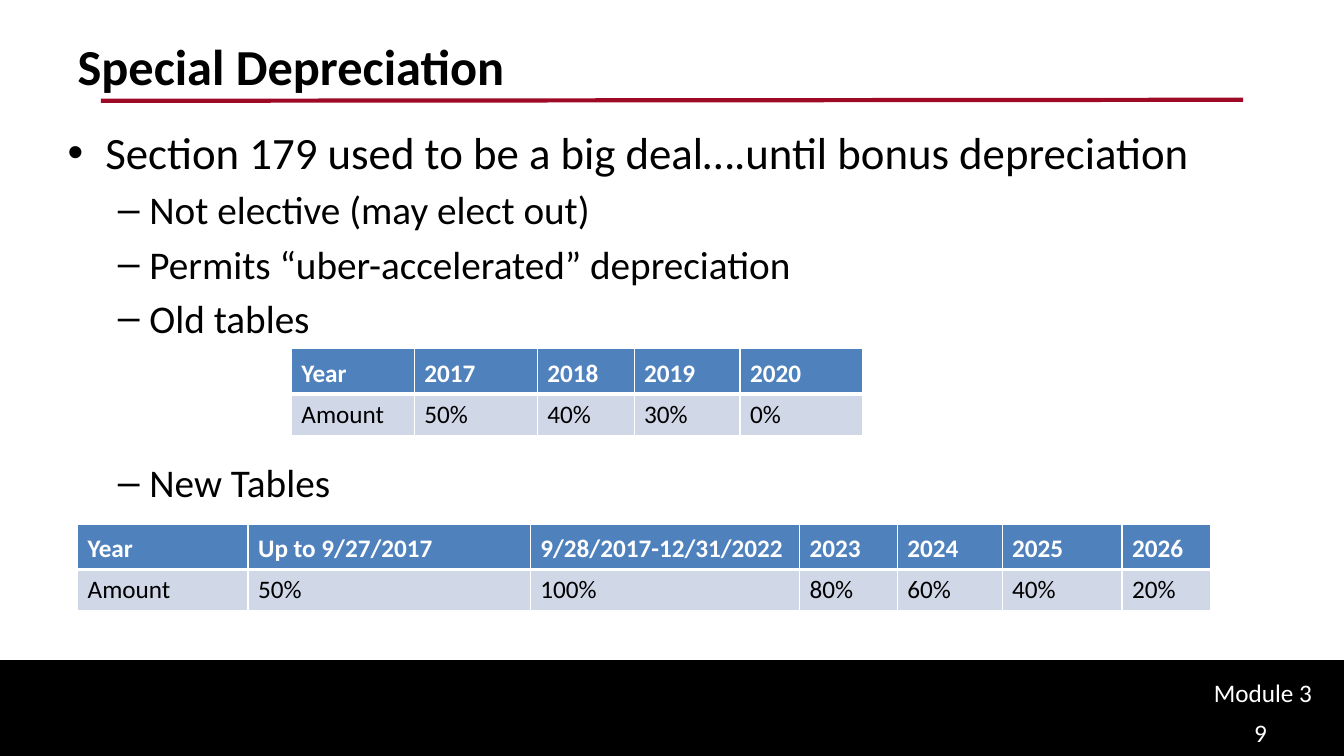
from dataclasses import dataclass

from lxml.etree import SubElement
from pptx import Presentation
from pptx.dml.color import RGBColor
from pptx.enum.shapes import MSO_CONNECTOR as Connector, MSO_SHAPE as Shape
from pptx.enum.text import MSO_ANCHOR as Anchor, MSO_AUTO_SIZE as AutoSize, PP_ALIGN as Align
from pptx.oxml.ns import qn
from pptx.util import Inches, Pt


@dataclass(frozen=True)
class Theme:
    font: str = "Calibri"
    black: str = "000000"
    white: str = "FFFFFF"
    red: str = "9E0926"
    header_blue: str = "4F81BD"
    band_blue: str = "D0D8E8"
    title_size: int = 36
    list_sizes: tuple = (32, 28)
    small_size: int = 18
    list_gap: int = 5


class SlideBuilder:
    def __init__(self, deck, theme):
        self.theme = theme
        self.page = deck.slides.add_slide(deck.slide_layouts[1])

    def add_span(self, para, text, size, color, bold=False):
        span = para.add_run()
        span.text = text
        span.font.name = self.theme.font
        span.font.size = Pt(size)
        span.font.bold = bold
        span.font.color.rgb = RGBColor.from_string(color)

    def place(self, box, left, top, width, height):
        box.left, box.top = Inches(left), Inches(top)
        box.width, box.height = Inches(width), Inches(height)
        frame = box.text_frame
        frame.word_wrap = True
        frame.auto_size = AutoSize.NONE
        frame.vertical_anchor = Anchor.TOP
        return frame

    def title(self, text, *bounds):
        para = self.place(self.page.shapes.title, *bounds).paragraphs[0]
        para.alignment = Align.LEFT
        self.add_span(para, text, self.theme.title_size, self.theme.black, bold=True)

    def bullets(self, items, *bounds):
        """Each item is (level, text, extra points of space before)."""
        frame = self.place(self.page.placeholders[1], *bounds)
        for index, (level, text, extra) in enumerate(items):
            para = frame.add_paragraph() if index else frame.paragraphs[0]
            para.level = level
            para.space_before = Pt(self.theme.list_gap + extra if index else 0)
            self.add_span(para, text, self.theme.list_sizes[level], self.theme.black)

    def label(self, text, *bounds):
        box = self.page.shapes.add_textbox(*map(Inches, bounds))
        frame = self.place(box, *bounds)
        self.add_span(frame.paragraphs[0], text, self.theme.small_size, self.theme.white)

    def band(self, color, *bounds):
        bar = self.page.shapes.add_shape(Shape.RECTANGLE, *map(Inches, bounds))
        bar.shadow.inherit = False
        bar.fill.solid()
        bar.fill.fore_color.rgb = RGBColor.from_string(color)
        bar.line.color.rgb = RGBColor.from_string(color)
        bar.line.width = Pt(2)

    def rule(self, color, width, *ends):
        line = self.page.shapes.add_connector(Connector.STRAIGHT, *map(Inches, ends))
        line.line.color.rgb = RGBColor.from_string(color)
        line.line.width = Pt(width)
        SubElement(line._element.spPr, qn("a:effectLst"))

    def borders(self, cell, top, bottom):
        properties = cell._tc.get_or_add_tcPr()
        widths = {"a:lnL": 1, "a:lnR": 1, "a:lnT": top, "a:lnB": bottom}
        for index, (tag, width) in enumerate(widths.items()):
            edge = SubElement(properties, qn(tag), w=str(Pt(width)))
            fill = SubElement(edge, qn("a:solidFill"))
            SubElement(fill, qn("a:srgbClr"), val=self.theme.white)
            properties.insert(index, edge)

    def table(self, rows, left, top, widths, heights):
        theme = self.theme
        size = (left, top, sum(widths), sum(heights))
        grid = self.page.shapes.add_table(
            len(rows), len(widths), *map(Inches, size)).table
        for column, width in zip(grid.columns, widths):
            column.width = Inches(width)
        for r, (values, height) in enumerate(zip(rows, heights)):
            grid.rows[r].height = Inches(height)
            header = r == 0
            for c, value in enumerate(values):
                cell = grid.cell(r, c)
                cell.vertical_anchor = Anchor.BOTTOM if header else Anchor.TOP
                cell.fill.solid()
                cell.fill.fore_color.rgb = RGBColor.from_string(
                    theme.header_blue if header else theme.band_blue)
                self.borders(cell, 1 if header else 3, 3 if header else 1)
                self.add_span(cell.text_frame.paragraphs[0], value, theme.small_size,
                              theme.white if header else theme.black, bold=header)


def main():
    deck = Presentation()
    deck.slide_width, deck.slide_height = Inches(13.33), Inches(7.5)
    theme = Theme()
    slide = SlideBuilder(deck, theme)

    # Footer band and title rule
    slide.band(theme.black, 0, 6.56, 13.33, 0.94)
    slide.rule(theme.red, 3, 1, 1, 12.33, 0.99)

    # Title and list, with room left for the first table
    slide.title("Special Depreciation", 0.67, 0.3, 12, 1.25)
    slide.bullets([
        (0, "Section 179 used to be a big deal….until bonus depreciation", 0),
        (1, "Not elective (may elect out)", 0),
        (1, "Permits “uber-accelerated” depreciation", 0),
        (1, "Old tables", 0),
        (1, "New Tables", 79),
    ], 0.57, 1.19, 12.1, 4.85)

    # Footer labels
    slide.label("Module 3", 11.94, 6.67, 1.32, 0.4)
    slide.label("9", 12.34, 7.07, 0.91, 0.43)

    # Old and new rate tables
    row_heights = (0.45, 0.41)
    slide.table([
        ("Year", "2017", "2018", "2019", "2020"),
        ("Amount", "50%", "40%", "30%", "0%"),
    ], 2.89, 3.46, (1.22, 1.22, 0.96, 1.05, 1.22), row_heights)
    slide.table([
        ("Year", "Up to 9/27/2017", "9/28/2017-12/31/2022", "2023", "2024", "2025", "2026"),
        ("Amount", "50%", "100%", "80%", "60%", "40%", "20%"),
    ], 0.77, 5.2, (1.69, 2.8, 2.67, 0.97, 1.04, 1.19, 0.88), row_heights)

    deck.save("out.pptx")


if __name__ == "__main__":
    main()
